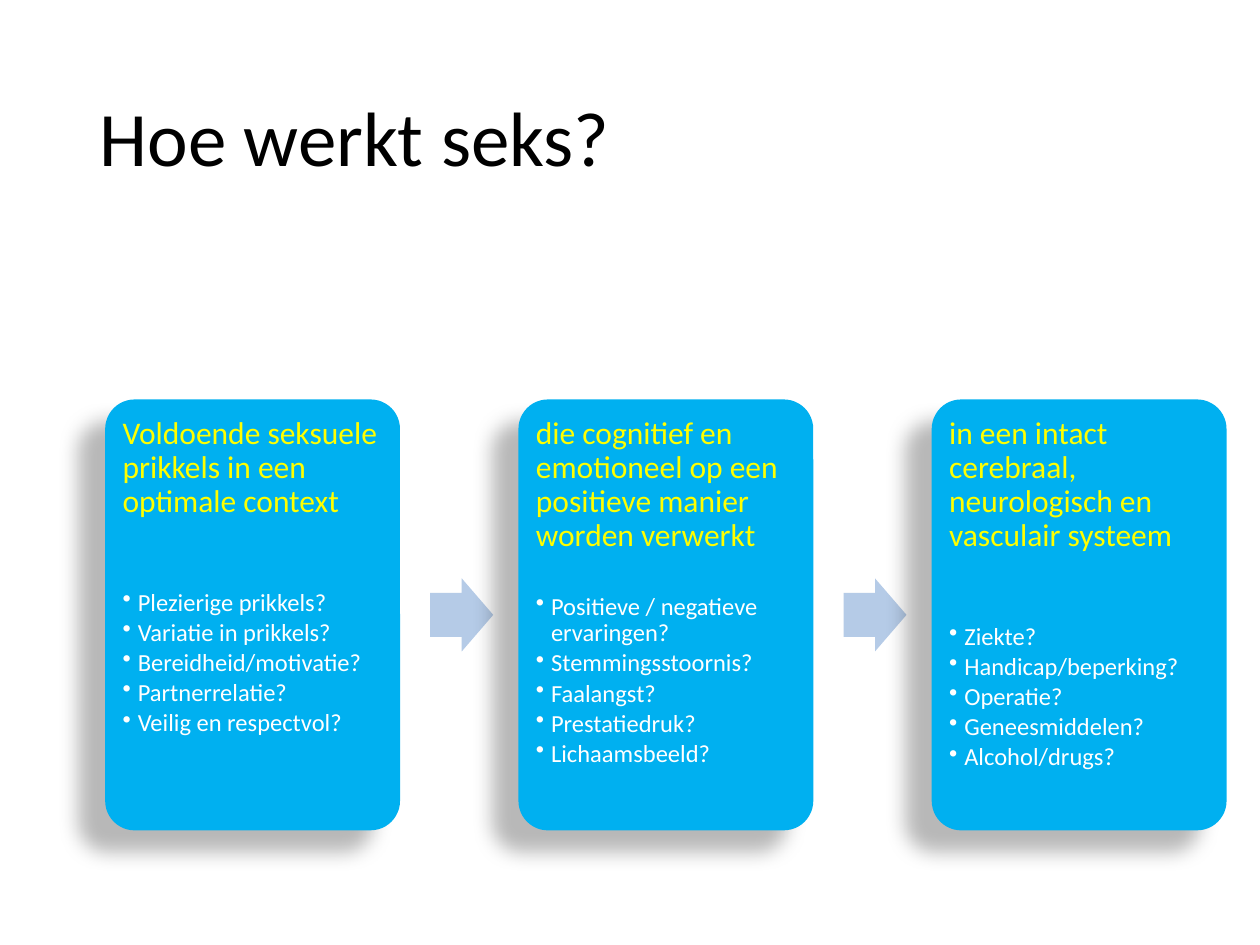
from dataclasses import dataclass

from lxml.etree import SubElement
from pptx import Presentation
from pptx.dml.color import RGBColor
from pptx.enum.shapes import MSO_SHAPE
from pptx.enum.text import MSO_ANCHOR, PP_ALIGN
from pptx.oxml.ns import qn
from pptx.util import Inches, Pt


@dataclass(frozen=True)
class Theme:
    font: str = "Calibri"
    title_size: float = 44
    heading_size: float = 18
    bullet_size: float = 14
    title: str = "000000"
    heading: str = "FFFF00"
    bullet: str = "FFFFFF"
    card: str = "00B0F0"
    arrow: str = "B5CBE7"
    shadow: str = "000000"


class SlideBuilder:
    def __init__(self, slide, theme):
        self.slide = slide
        self.theme = theme

    def add_run(self, p, text, size, color):
        p.alignment = PP_ALIGN.LEFT
        p.line_spacing = 0.9
        r = p.add_run()
        r.text = text
        r.font.name = self.theme.font
        r.font.size = Pt(size)
        r.font.color.rgb = RGBColor.from_string(color)

    def add_title(self, text, x, y, w, h):
        sp = self.slide.shapes.title
        sp.left, sp.top, sp.width, sp.height = map(Inches, (x, y, w, h))
        tf = sp.text_frame
        tf.word_wrap = True
        tf.vertical_anchor = MSO_ANCHOR.MIDDLE
        self.add_run(tf.paragraphs[0], text, self.theme.title_size, self.theme.title)

    def add_block(self, kind, x, y, w, h, color, adjustments):
        sp = self.slide.shapes.add_shape(kind, *map(Inches, (x, y, w, h)))
        for i, value in enumerate(adjustments):
            sp.adjustments[i] = value
        sp.shadow.inherit = False
        sp.fill.solid()
        sp.fill.fore_color.rgb = RGBColor.from_string(color)
        sp.line.fill.background()
        return sp

    def add_shadow(self, sp):
        effects = sp._element.spPr.find(qn("a:effectLst"))
        shadow = SubElement(effects, qn("a:outerShdw"), blurRad=str(Pt(11.8)),
                            dist=str(Pt(19.7)), dir=str(141 * 60000),
                            algn="ctr", rotWithShape="0")
        color = SubElement(shadow, qn("a:srgbClr"), val=self.theme.shadow)
        SubElement(color, qn("a:alpha"), val="28000")

    def add_bullet(self, tf, text):
        p = tf.add_paragraph()
        pPr = p._p.get_or_add_pPr()
        pPr.set("marL", str(Inches(0.12)))
        pPr.set("indent", str(-Inches(0.12)))
        SubElement(pPr, qn("a:buChar"), char="•")
        p.space_after = Pt(2.1)
        self.add_run(p, text, self.theme.bullet_size, self.theme.bullet)

    def add_card(self, x, y, w, h, heading, gap, bullets):
        sp = self.add_block(MSO_SHAPE.ROUNDED_RECTANGLE, x, y, w, h,
                            self.theme.card, [0.1])
        self.add_shadow(sp)
        tf = sp.text_frame
        tf.word_wrap = True
        tf.vertical_anchor = MSO_ANCHOR.TOP
        tf.margin_left = tf.margin_right = Inches(0.07)
        tf.margin_top = tf.margin_bottom = Inches(0.07)
        p = tf.paragraphs[0]
        p.space_after = Pt(gap)
        self.add_run(p, heading, self.theme.heading_size, self.theme.heading)
        for text in bullets:
            self.add_bullet(tf, text)

    def add_arrow(self, x, y, w, h):
        self.add_block(MSO_SHAPE.RIGHT_ARROW, x, y, w, h, self.theme.arrow, [0.6, 0.5])


# Heading, space below it in points, bullets
STEPS = [
    ("Voldoende seksuele prikkels in een optimale context", 40.5,
     ["Plezierige prikkels?", "Variatie in prikkels?", "Bereidheid/motivatie?",
      "Partnerrelatie?", "Veilig en respectvol?"]),
    ("die cognitief en emotioneel op een positieve manier worden verwerkt", 23.5,
     ["Positieve / negatieve ervaringen?", "Stemmingsstoornis?", "Faalangst?",
      "Prestatiedruk?", "Lichaamsbeeld?"]),
    ("in een intact cerebraal, neurologisch en vasculair systeem", 40.5,
     ["Ziekte?", "Handicap/beperking?", "Operatie?", "Geneesmiddelen?",
      "Alcohol/drugs?"]),
]
CARD_X, CARD_Y, CARD_W, CARD_H = 0.835, 3.17, 2.34, 3.42
PITCH = 3.28
ARROW_GAP, ARROW_W, ARROW_H = 0.24, 0.5, 0.58


def main():
    prs = Presentation()
    prs.slide_width, prs.slide_height = Inches(10), Inches(7.5)
    builder = SlideBuilder(prs.slides.add_slide(prs.slide_layouts[5]), Theme())

    # Title
    builder.add_title("Hoe werkt seks?", 0.69, 0.4, 8.62, 1.45)

    # Process: cards with an arrow between neighbours
    arrow_y = CARD_Y + (CARD_H - ARROW_H) / 2
    for i, (heading, gap, bullets) in enumerate(STEPS):
        x = CARD_X + i * PITCH
        if i:
            arrow_x = x - PITCH + CARD_W + ARROW_GAP
            builder.add_arrow(arrow_x, arrow_y, ARROW_W, ARROW_H)
        builder.add_card(x, CARD_Y, CARD_W, CARD_H, heading, gap, bullets)

    prs.save("out.pptx")


if __name__ == "__main__":
    main()
